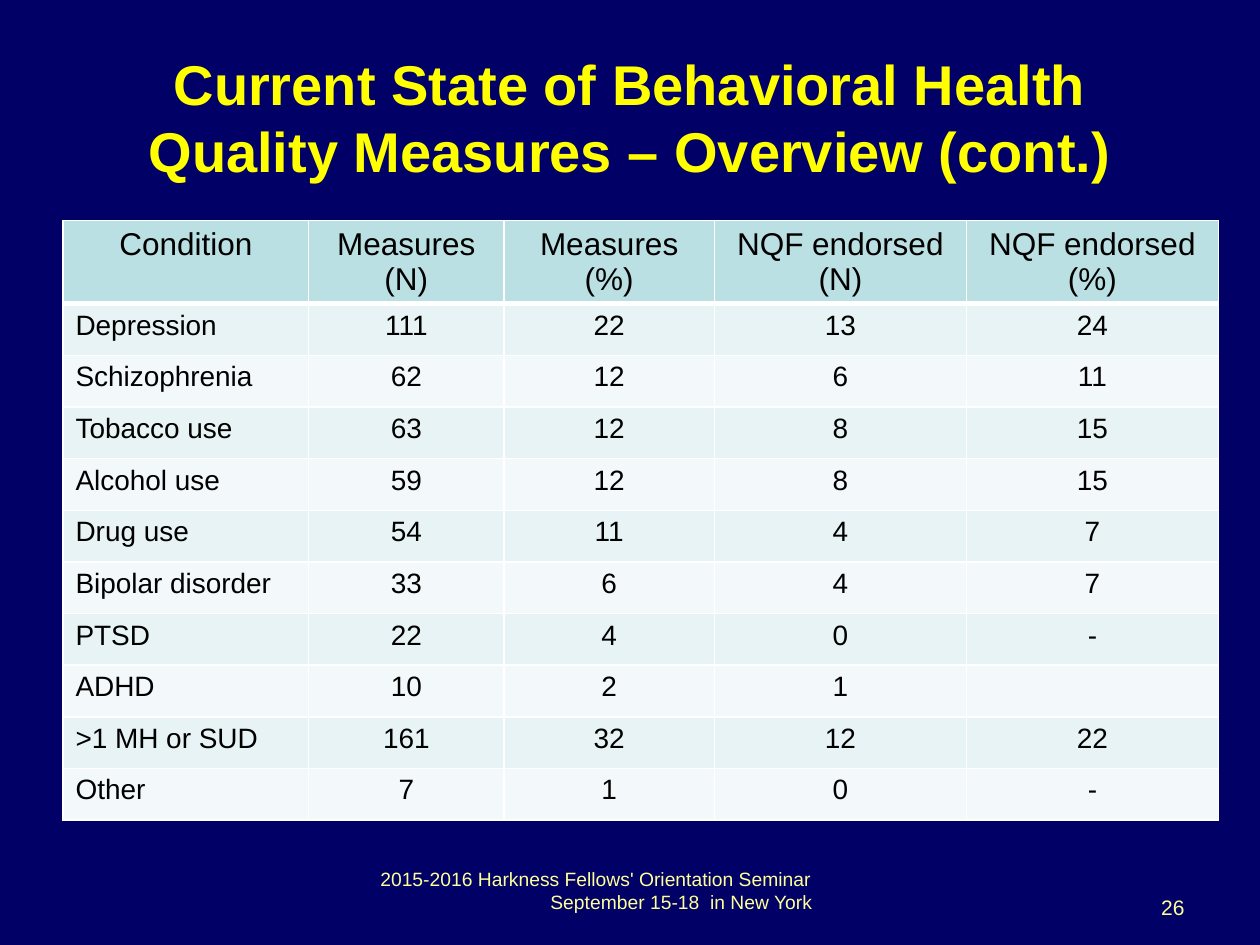
from dataclasses import dataclass

from pptx import Presentation
from pptx.dml.color import RGBColor
from pptx.enum import text
from pptx.oxml import parse_xml
from pptx.oxml.ns import nsdecls
from pptx.util import Inches, Pt

COLORS = {
    "background": "000066",
    "title": "FFFF00",
    "footer": "FFFF99",
    "ink": "000000",
    "header": "BBE0E3",
    "odd": "E7F3F4",
    "even": "F3F9FA",
    "border": "FFFFFF",
}
FONT = "Arial"
LEFT, CENTER, RIGHT = text.PP_ALIGN.LEFT, text.PP_ALIGN.CENTER, text.PP_ALIGN.RIGHT

HEADINGS = ("Condition", "Measures (N)", "Measures (%)", "NQF endorsed (N)", "NQF endorsed (%)")
COLUMN_WIDTHS = (1.95, 1.55, 1.67, 2, 2)
HEADER_HEIGHT, ROW_HEIGHT = 0.66, 0.41


@dataclass(frozen=True)
class Condition:
    name: str
    measures: int
    measures_share: int
    endorsed: int
    endorsed_share: str

    def texts(self) -> tuple[str, ...]:
        return (self.name, str(self.measures), str(self.measures_share),
                str(self.endorsed), self.endorsed_share)


@dataclass(frozen=True)
class Note:
    lines: tuple[str, ...]
    left: float
    width: float
    size: float
    align: text.PP_ALIGN
    anchor: text.MSO_ANCHOR
    last_indent: float = 0


CONDITIONS = (
    Condition("Depression", 111, 22, 13, "24"),
    Condition("Schizophrenia", 62, 12, 6, "11"),
    Condition("Tobacco use", 63, 12, 8, "15"),
    Condition("Alcohol use", 59, 12, 8, "15"),
    Condition("Drug use", 54, 11, 4, "7"),
    Condition("Bipolar disorder", 33, 6, 4, "7"),
    Condition("PTSD", 22, 4, 0, "-"),
    Condition("ADHD", 10, 2, 1, ""),
    Condition(">1 MH or SUD", 161, 32, 12, "22"),
    Condition("Other", 7, 1, 0, "-"),
)
NOTES = (
    Note(("26",), 7.17, 2.33, 12, RIGHT, text.MSO_ANCHOR.BOTTOM),
    Note(("2015-2016 Harkness Fellows' Orientation Seminar", "September 15-18  in New York"),
         2.92, 4.25, 11, LEFT, text.MSO_ANCHOR.TOP, last_indent=1.35),
)


def color(name: str) -> RGBColor:
    return RGBColor.from_string(COLORS[name])


def format_text(frame, size: float, color_name: str, align, bold: bool = False) -> None:
    for para in frame.paragraphs:
        para.alignment = align
        para.font.size = Pt(size)
        for span in para.runs:
            span.font.name = FONT
            span.font.size = Pt(size)
            span.font.bold = bold
            span.font.color.rgb = color(color_name)


def add_borders(cell, bottom_width: float) -> None:
    """Insert the four edge lines ahead of the cell's fill, as the schema requires."""
    properties = cell._tc.get_or_add_tcPr()
    widths = {"lnL": 1, "lnR": 1, "lnT": 1, "lnB": bottom_width}
    for place, (tag, width) in enumerate(widths.items()):
        properties.insert(place, parse_xml(
            f'<a:{tag} {nsdecls("a")} w="{Pt(width)}"><a:solidFill>'
            f'<a:srgbClr val="{COLORS["border"]}"/></a:solidFill></a:{tag}>'))


def add_title(page) -> None:
    box = page.shapes.title
    box.left, box.top, box.width, box.height = map(Inches, (0.5, 0.3, 9, 1.25))
    box.text_frame.text = "Current State of Behavioral Health Quality Measures – Overview (cont.)"
    box.text_frame.vertical_anchor = text.MSO_ANCHOR.MIDDLE
    format_text(box.text_frame, 32, "title", CENTER, bold=True)


def add_measures_table(page) -> None:
    rows = [HEADINGS] + [condition.texts() for condition in CONDITIONS]
    height = HEADER_HEIGHT + ROW_HEIGHT * len(CONDITIONS)
    table = page.shapes.add_table(
        len(rows), len(HEADINGS), Inches(0.5), Inches(1.75),
        Inches(sum(COLUMN_WIDTHS)), Inches(height)).table
    for column, width in zip(table.columns, COLUMN_WIDTHS):
        column.width = Inches(width)
    for r, values in enumerate(rows):
        is_header = r == 0
        table.rows[r].height = Inches(HEADER_HEIGHT if is_header else ROW_HEIGHT)
        fill = "header" if is_header else "odd" if r % 2 else "even"
        for c, value in enumerate(values):
            cell = table.cell(r, c)
            cell.text_frame.text = value
            align = CENTER if is_header or c > 0 else LEFT
            format_text(cell.text_frame, 18 if is_header else 16, "ink", align)
            cell.fill.solid()
            cell.fill.fore_color.rgb = color(fill)
            add_borders(cell, bottom_width=3 if is_header else 1)


def add_note(page, note: Note) -> None:
    box = page.shapes.add_textbox(Inches(note.left), Inches(6.83), Inches(note.width), Inches(0.52))
    frame = box.text_frame
    frame.word_wrap = True
    frame.vertical_anchor = note.anchor
    frame.text = "\n".join(note.lines)
    format_text(frame, note.size, "footer", note.align)
    if note.last_indent:
        properties = frame.paragraphs[-1]._p.get_or_add_pPr()
        properties.set("marL", str(Inches(note.last_indent)))


def main() -> None:
    deck = Presentation()
    deck.slide_width, deck.slide_height = Inches(10), Inches(7.5)
    page = deck.slides.add_slide(deck.slide_layouts.get_by_name("Title Only"))
    page.background.fill.solid()
    page.background.fill.fore_color.rgb = color("background")
    add_title(page)
    add_measures_table(page)
    for note in NOTES:
        add_note(page, note)
    deck.save("out.pptx")


if __name__ == "__main__":
    main()
